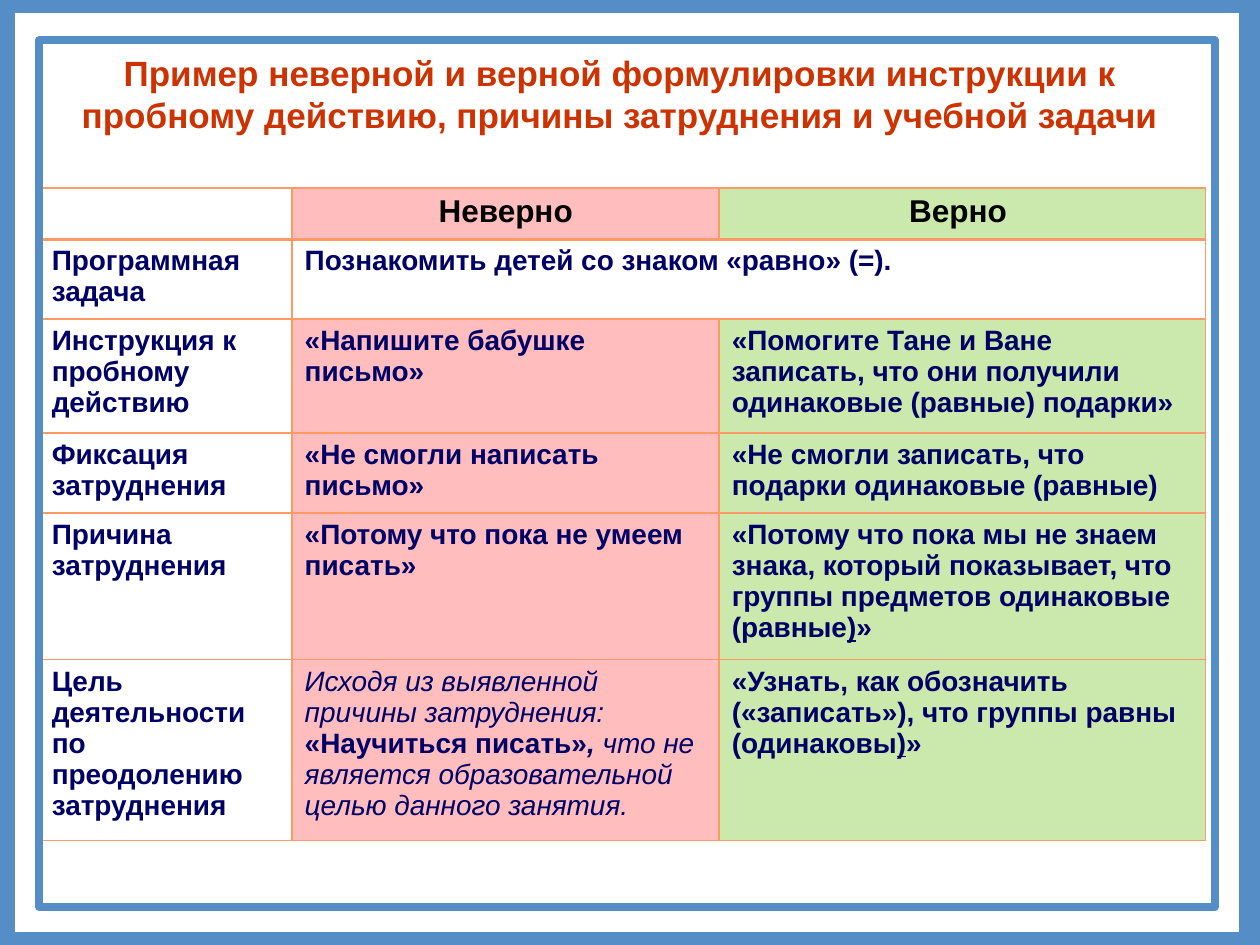
from lxml import etree
from pptx import Presentation
from pptx.dml.color import RGBColor
from pptx.enum import shapes, text
from pptx.oxml import ns
from pptx.util import Cm, Pt

BLUE = RGBColor(0x55, 0x8E, 0xC7)
ORANGE = RGBColor(0xFF, 0x99, 0x66)
RED = RGBColor(0xCC, 0x33, 0x00)
NAVY = RGBColor(0x00, 0x00, 0x66)
BLACK = RGBColor(0x00, 0x00, 0x00)
PINK = RGBColor(0xFF, 0xBD, 0xBD)
GREEN = RGBColor(0xCC, 0xE9, 0xAD)


def add_run(paragraph, words, size, color, style="b"):
    """Style letters: b bold, i italic, u underlined."""
    run = paragraph.add_run()
    run.text = words
    font = run.font
    font.name, font.size, font.color.rgb = "Arial", Pt(size), color
    font.bold, font.italic = "b" in style, "i" in style
    font.underline = "u" in style


def set_borders(cell, bottom_width):
    properties = cell._tc.get_or_add_tcPr()
    widths = {"lnL": 1, "lnR": 1, "lnT": 1, "lnB": bottom_width}
    for position, (side, width) in enumerate(widths.items()):
        line = etree.Element(ns.qn("a:" + side), w=str(Pt(width)))
        fill = etree.SubElement(line, ns.qn("a:solidFill"))
        etree.SubElement(fill, ns.qn("a:srgbClr"), val=str(ORANGE))
        properties.insert(position, line)


prs = Presentation()
prs.slide_width, prs.slide_height = Cm(25.4), Cm(19.05)
slide = prs.slides.add_slide(prs.slide_layouts[5])

# Title
title = slide.shapes.title
title.left, title.top, title.width, title.height = Cm(1.09), Cm(0.91), Cm(22.81), Cm(1.96)
heading = title.text_frame
heading.word_wrap = True
heading.auto_size = text.MSO_AUTO_SIZE.NONE
heading.vertical_anchor = text.MSO_ANCHOR.TOP
heading.paragraphs[0].alignment = text.PP_ALIGN.CENTER
add_run(heading.paragraphs[0],
        "Пример неверной и верной формулировки инструкции к пробному действию, "
        "причины затруднения и учебной задачи", 20, RED)

# Comparison table: each cell is a list of (words, style) runs
rows = [
    [[], [("Неверно", "b")], [("Верно ", "b")]],
    [[("Программная задача", "b")],
     [("Познакомить детей со знаком «равно» (=).", "b")], []],
    [[("Инструкция к пробному действию", "b")],
     [("«Напишите бабушке письмо»", "b")],
     [("«Помогите Тане и Ване записать, что они получили одинаковые (равные) подарки»", "b")]],
    [[("Фиксация затруднения", "b")],
     [("«Не смогли написать письмо»", "b")],
     [("«Не смогли записать, что подарки одинаковые (равные)", "b")]],
    [[("Причина затруднения", "b")],
     [("«Потому что пока не умеем писать»", "b")],
     [("«Потому что пока мы не знаем знака, который показывает, что группы предметов "
       "одинаковые (равные", "b"), (")", "bu"), ("»", "b")]],
    [[("Цель деятельности по преодолению затруднения", "b")],
     [("Исходя из выявленной причины затруднения: ", "i"), ("«Научиться писать»", "b"),
      (", ", "bi"), ("что не является образовательной целью данного занятия.", "i")],
     [("«Узнать, как обозначить («записать»), что группы равны (одинаковы", "b"),
      (")", "bu"), ("»", "b")]],
]
column_widths = [5.1, 8.61, 9.8]
row_heights = [1.02, 1.61, 2.3, 1.61, 2.96, 3.64]
HEADER, TASK = 0, 1

comparison = slide.shapes.add_table(len(rows), len(column_widths), Cm(0.79), Cm(3.79),
                                    Cm(sum(column_widths)), Cm(sum(row_heights))).table
comparison.horz_banding = False
for column, width in zip(comparison.columns, column_widths):
    column.width = Cm(width)
for row, height in zip(comparison.rows, row_heights):
    row.height = Cm(height)
comparison.cell(TASK, 1).merge(comparison.cell(TASK, 2))

for r, row in enumerate(rows):
    for c, (runs, color) in enumerate(zip(row, [None, PINK, GREEN])):
        cell = comparison.cell(r, c)
        if color is None or r == TASK:
            cell.fill.background()
        else:
            cell.fill.solid()
            cell.fill.fore_color.rgb = color
        set_borders(cell, 2 if r == HEADER else 1)
        paragraph = cell.text_frame.paragraphs[0]
        if r == HEADER:
            paragraph.alignment = text.PP_ALIGN.CENTER
        for words, style in runs:
            add_run(paragraph, words, 18 if r == HEADER else 16,
                    BLACK if r == HEADER else NAVY, style)

# Double frame
for left, top, width, height, weight in [(0.03, 0, 25.22, 19.05, 15),
                                         (0.79, 0.81, 23.7, 17.48, 4.5)]:
    frame = slide.shapes.add_shape(shapes.MSO_SHAPE.RECTANGLE,
                                   Cm(left), Cm(top), Cm(width), Cm(height))
    frame.shadow.inherit = False
    frame.fill.background()
    frame.line.color.rgb = BLUE
    frame.line.width = Pt(weight)

prs.save("out.pptx")
